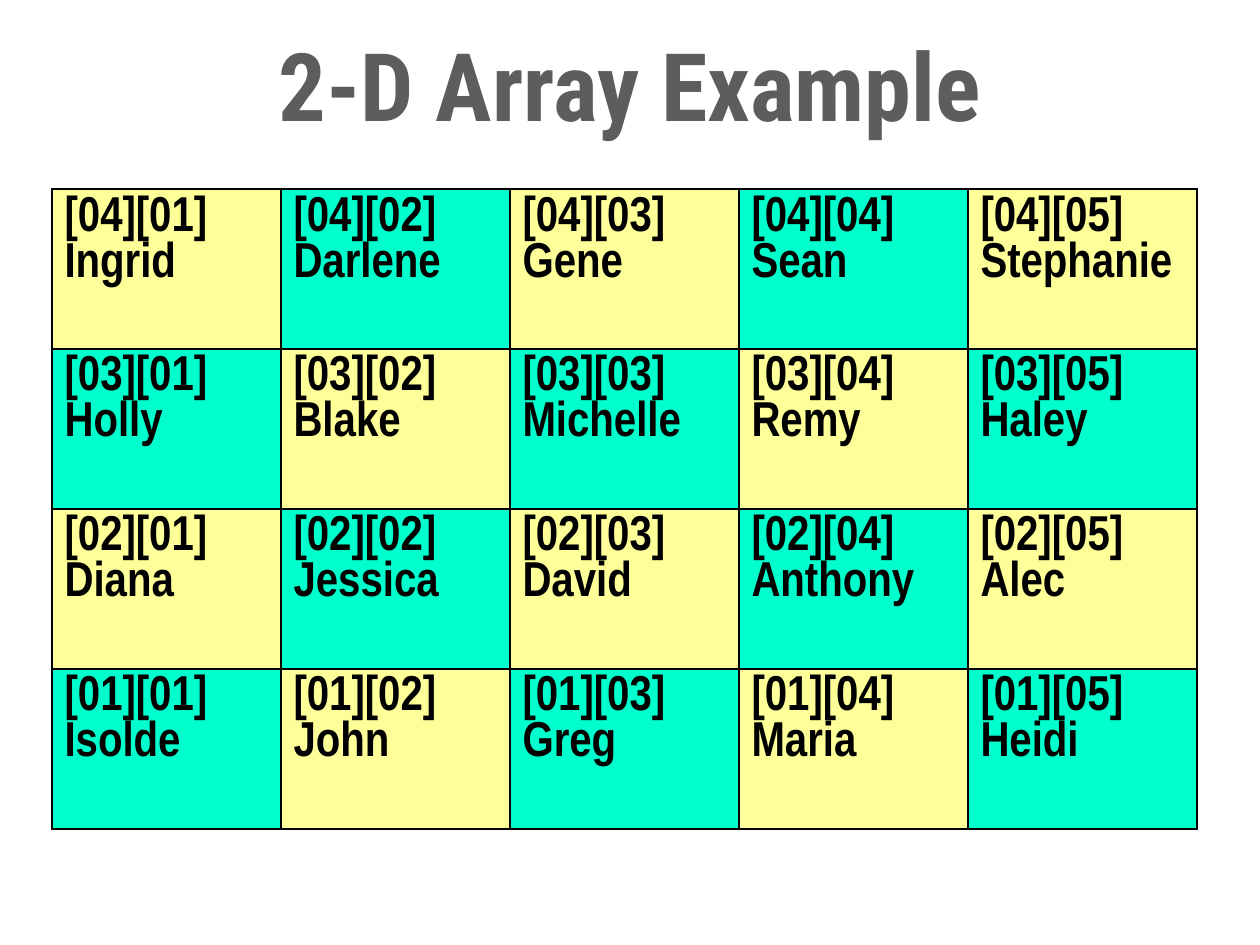
from lxml.etree import SubElement
from pptx import Presentation
from pptx.dml.color import RGBColor
from pptx.enum.text import MSO_ANCHOR as Anchor, PP_ALIGN as Align
from pptx.oxml.ns import qn
from pptx.util import Emu, Pt

# Content: names from the highest array row down to the first
TITLE = "2-D Array Example"
NAMES = [
    ["Ingrid", "Darlene", "Gene", "Sean", "Stephanie"],
    ["Holly", "Blake", "Michelle", "Remy", "Haley"],
    ["Diana", "Jessica", "David", "Anthony", "Alec"],
    ["Isolde", "John", "Greg", "Maria", "Heidi"],
]

GREY = RGBColor(0x5D, 0x5D, 0x5D)
BLACK = RGBColor(0, 0, 0)
YELLOW = RGBColor(0xFF, 0xFF, 0x99)
TEAL = RGBColor(0x00, 0xFF, 0xCC)

PX_PER_INCH = 126
SLIDE_SIZE = (1260, 945)
TITLE_AREA = (0, 20, 1260, 127)
GRID_LEFT, GRID_TOP = 52, 189
CELL_WIDTH, CELL_HEIGHT = 229, 160


def px(length):
    return Emu(round(length * 914400 / PX_PER_INCH))


def style(para, font_name, size, color):
    font = para.font
    font.name, font.size, font.bold = font_name, Pt(size), True
    font.color.rgb = color


def add_borders(cell):
    """Draw a 1 pt black line on each side; borders must precede the fill."""
    properties = cell._tc.get_or_add_tcPr()
    for side in ("a:lnL", "a:lnR", "a:lnT", "a:lnB"):
        line = SubElement(properties, qn(side), w=str(Pt(1)))
        fill = SubElement(line, qn("a:solidFill"))
        SubElement(fill, qn("a:srgbClr"), val=str(BLACK))


deck = Presentation()
deck.slide_width, deck.slide_height = map(px, SLIDE_SIZE)
page = deck.slides.add_slide(deck.slide_layouts[6])

# Title
box = page.shapes.add_textbox(*map(px, TITLE_AREA))
frame = box.text_frame
frame.word_wrap = True
frame.vertical_anchor = Anchor.MIDDLE
frame.text = TITLE
heading = frame.paragraphs[0]
heading.alignment = Align.CENTER
style(heading, "Roboto Condensed", 54, GREY)

# Checkered table of array elements
row_count, column_count = len(NAMES), len(NAMES[0])
table = page.shapes.add_table(
    row_count, column_count, px(GRID_LEFT), px(GRID_TOP),
    px(CELL_WIDTH * column_count), px(CELL_HEIGHT * row_count)).table
table.first_row = table.horz_banding = False
for column in table.columns:
    column.width = px(CELL_WIDTH)
for row in table.rows:
    row.height = px(CELL_HEIGHT)

for r, names in enumerate(NAMES):
    for c, name in enumerate(names):
        cell = table.cell(r, c)
        add_borders(cell)
        cell.fill.solid()
        cell.fill.fore_color.rgb = TEAL if (r + c) % 2 else YELLOW
        cell.text = f"[{row_count - r:02}][{c + 1:02}]\n{name}"
        for para in cell.text_frame.paragraphs:
            style(para, "Arial Narrow", 28, BLACK)

deck.save("out.pptx")
